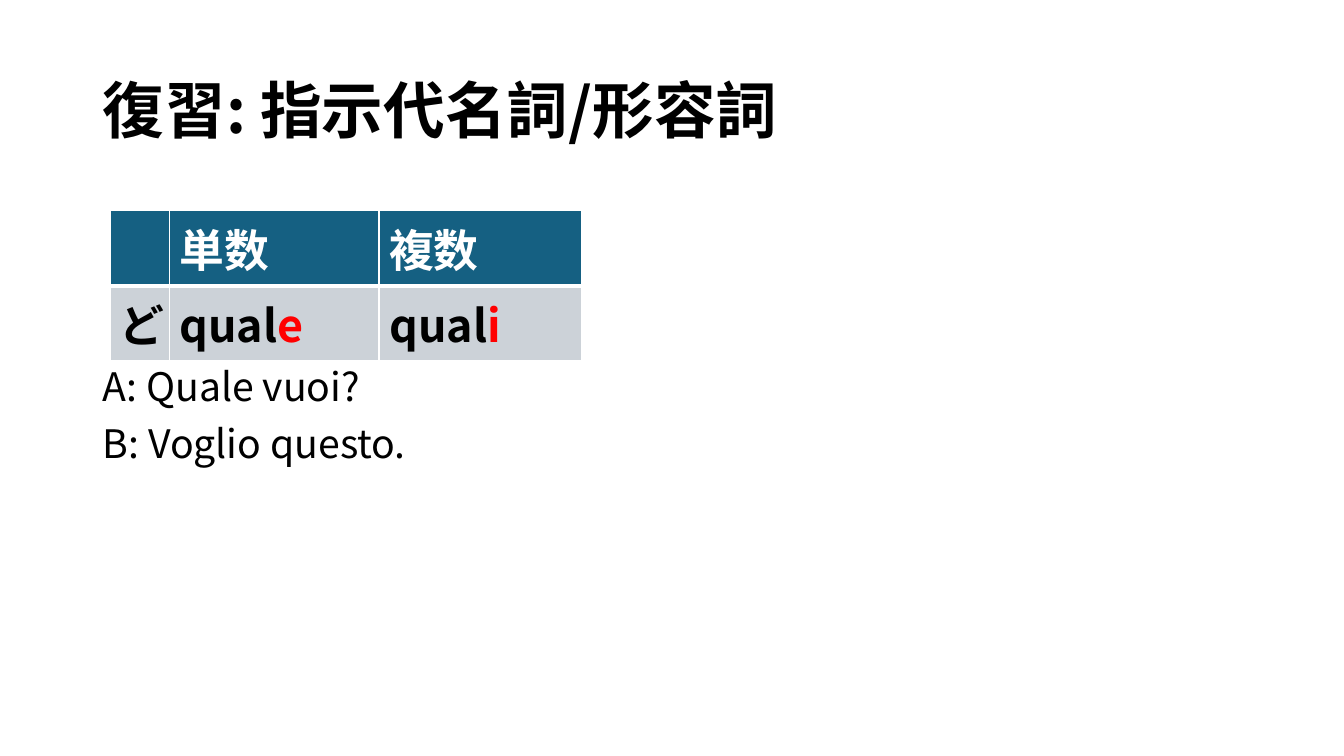
from dataclasses import dataclass

from lxml.etree import SubElement
from pptx import Presentation
from pptx.dml.color import RGBColor
from pptx.enum.text import MSO_ANCHOR, MSO_AUTO_SIZE, PP_ALIGN
from pptx.oxml.ns import qn
from pptx.util import Inches, Pt

TITLE = "復習: 指示代名詞/形容詞"
DIALOGUE = ["A: Quale vuoi?", "B: Voglio questo."]
# Each cell is a (stem, highlighted ending) pair.
TABLE = [
    [("", ""), ("単数", ""), ("複数", "")],
    [("ど", ""), ("qual", "e"), ("qual", "i")],
]
COLUMN_WIDTHS = [0.59, 2.08, 2.01]
ROW_HEIGHT = 0.74


@dataclass(frozen=True)
class Theme:
    font: str = "Noto Sans CJK JP"
    text: str = "000000"
    header_text: str = "FFFFFF"
    ending: str = "FF0000"
    header_fill: str = "156082"
    body_fill: str = "CCD2D8"
    border: str = "FFFFFF"
    title_size: int = 44
    body_size: int = 28
    table_size: int = 32


THEME = Theme()


def style_run(r, size, color, bold=False):
    r.font.name = THEME.font
    r.font.size = Pt(size)
    r.font.bold = bold
    r.font.color.rgb = RGBColor.from_string(color)
    SubElement(r.font._element, qn("a:ea"), typeface=THEME.font)


def place(sp, left, top, width, height):
    sp.left, sp.top = Inches(left), Inches(top)
    sp.width, sp.height = Inches(width), Inches(height)


def fill_placeholder(sp, lines, size, anchor, space_before=0, bold=False):
    tf = sp.text_frame
    tf.text = "\n".join(lines)
    tf.word_wrap = True
    tf.auto_size = MSO_AUTO_SIZE.NONE
    tf.vertical_anchor = anchor
    for p in tf.paragraphs:
        p.alignment = PP_ALIGN.LEFT
        p.line_spacing = 0.9
        p.space_before = Pt(space_before)
        pPr = p._p.get_or_add_pPr()
        pPr.set("marL", "0")
        pPr.set("indent", "0")
        SubElement(pPr, qn("a:buNone"))
        for r in p.runs:
            style_run(r, size, THEME.text, bold)


def set_borders(cell, widths):
    """Draw the cell's edges; widths maps L, R, T and B to points."""
    tcPr = cell._tc.get_or_add_tcPr()
    for side, width in widths.items():
        ln = SubElement(tcPr, qn(f"a:ln{side}"), w=str(Pt(width)))
        fill = SubElement(ln, qn("a:solidFill"))
        SubElement(fill, qn("a:srgbClr"), val=THEME.border)


def fill_cell(cell, parts, is_header):
    set_borders(cell, {"L": 1, "R": 1, "T": 1 if is_header else 3, "B": 3 if is_header else 1})
    cell.fill.solid()
    cell.fill.fore_color.rgb = RGBColor.from_string(
        THEME.header_fill if is_header else THEME.body_fill)
    p = cell.text_frame.paragraphs[0]
    stem_color = THEME.header_text if is_header else THEME.text
    for text, color in zip(parts, (stem_color, THEME.ending)):
        if text:
            r = p.add_run()
            r.text = text
            style_run(r, THEME.table_size, color, bold=True)


def add_pronoun_table(slide):
    table = slide.shapes.add_table(
        len(TABLE), len(COLUMN_WIDTHS), Inches(1.09), Inches(2.09),
        Inches(sum(COLUMN_WIDTHS)), Inches(ROW_HEIGHT * len(TABLE))).table
    for column, width in zip(table.columns, COLUMN_WIDTHS):
        column.width = Inches(width)
    for i, row in enumerate(TABLE):
        for j, parts in enumerate(row):
            fill_cell(table.cell(i, j), parts, is_header=i == 0)


def main():
    prs = Presentation()
    prs.slide_width, prs.slide_height = Inches(13.33), Inches(7.5)
    slide = prs.slides.add_slide(prs.slide_layouts[1])
    title, body = slide.placeholders
    place(title, 0.92, 0.4, 11.5, 1.45)
    fill_placeholder(title, [TITLE], THEME.title_size, MSO_ANCHOR.MIDDLE, bold=True)
    place(body, 0.92, 3.6, 11.5, 3.9)
    fill_placeholder(body, DIALOGUE, THEME.body_size, MSO_ANCHOR.TOP, space_before=10)
    add_pronoun_table(slide)
    prs.save("out.pptx")


if __name__ == "__main__":
    main()
